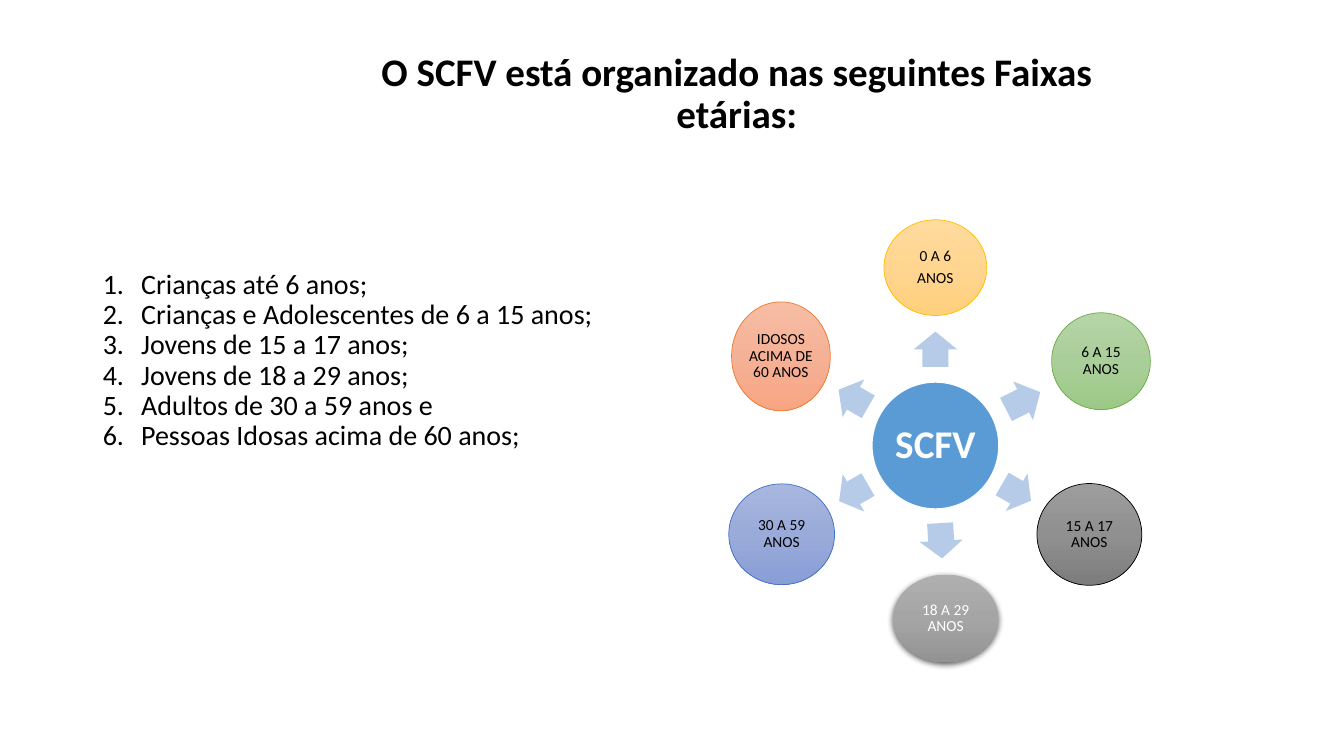
from copy import deepcopy
from dataclasses import dataclass
from math import cos, radians, sin

from lxml import etree
from pptx import Presentation
from pptx import util as u
from pptx.dml.color import RGBColor
from pptx.enum import shapes, text
from pptx.oxml import ns

COLUMNS, ROWS = 160, 90
HUB_COLUMN, HUB_ROW, HUB_SIZE = 111.36, 53.04, 15.12
ARROW_HEIGHT = 5.16
FONT = "Calibri"
AGE_GROUPS = [
    "Crianças até 6 anos;",
    "Crianças e Adolescentes de 6 a 15 anos;",
    "Jovens de 15 a 17 anos;",
    "Jovens de 18 a 29 anos;",
    "Adultos de 30 a 59 anos e",
    "Pessoas Idosas acima de 60 anos;",
]


@dataclass
class Spoke:
    lines: list[str]
    angle: float
    arrow_reach: float
    arrow_length: float
    reach: float
    width: float
    height: float
    shades: tuple[str, str, str]
    outline: str | None
    ink: str = "000000"


SPOKES = [
    Spoke(["0 A 6", "ANOS"], 270, 11.46, 4.2, 21.18, 12.24, 11.4,
          ("FFDB9E", "FFD590", "FFD07C"), "FFC000"),
    Spoke(["6 A 15 ANOS"], 333, 11.72, 4.56, 22.12, 11.76, 11.52,
          ("B5D5A7", "AACE9A", "9CC987"), "70AD47"),
    Spoke(["15 A 17 ANOS"], 30, 11.16, 3.96, 21.16, 12.48, 12.12,
          ("9D9D9D", "909090", "7C7C7C"), "000000"),
    Spoke(["18 A 29 ANOS"], 86.6, 11.36, 4.2, 20.62, 12.48, 10.44,
          ("AFAFAF", "A5A5A5", "939393"), None, "FFFFFF"),
    Spoke(["30 A 59 ANOS"], 150, 11.26, 3.96, 21.13, 12.6, 12,
          ("A8B7DF", "9AABD9", "889ED7"), "4472C4"),
    Spoke(["IDOSOS ACIMA DE 60 ANOS"], 210, 11.27, 4.08, 21.24, 11.76, 12.96,
          ("F7BDA5", "F5B196", "F8A582"), "ED7D31"),
]

deck = Presentation()
deck.slide_width, deck.slide_height = u.Inches(13.33), u.Inches(7.5)
page = deck.slides.add_slide(deck.slide_layouts[1])


def color(value: str) -> RGBColor:
    return RGBColor.from_string(value)


def across(columns: float) -> int:
    return round(deck.slide_width * columns / COLUMNS)


def down(rows: float) -> int:
    return round(deck.slide_height * rows / ROWS)


def place(box, column: float, row: float, width: float, height: float) -> None:
    box.left, box.top = across(column), down(row)
    box.width, box.height = across(width), down(height)


def style(para, size: float, ink: str, bold: bool, align) -> None:
    para.alignment = align
    para.line_spacing = 0.9
    para.space_before = u.Pt(0)
    para.font.name, para.font.size, para.font.bold = FONT, u.Pt(size), bold
    para.font.color.rgb = color(ink)


def add_at_angle(kind, angle: float, reach: float, width: float, height: float):
    column = HUB_COLUMN + reach * cos(radians(angle)) - width / 2
    row = HUB_ROW + reach * sin(radians(angle)) - height / 2
    shape = page.shapes.add_shape(
        kind, across(column), down(row), across(width), down(height))
    shape.shadow.inherit = False
    return shape


def write(shape, lines: list[str], size: float, ink: str, bold: bool, inset: float) -> None:
    frame = shape.text_frame
    frame.word_wrap = True
    frame.vertical_anchor = text.MSO_ANCHOR.MIDDLE
    frame.margin_left = frame.margin_right = u.Inches(inset)
    frame.margin_top = frame.margin_bottom = u.Inches(inset)
    frame.text = "\n".join(lines)
    for para in frame.paragraphs:
        style(para, size, ink, bold, text.PP_ALIGN.CENTER)
        para.space_after = u.Pt(size * 0.35)


def shade(shape, shades: tuple[str, str, str]) -> None:
    shape.fill.gradient()
    shape.fill.gradient_angle = 270
    stop_list = shape._element.spPr.find(".//" + ns.qn("a:gsLst"))
    stop_list.append(deepcopy(stop_list[0]))
    for stop, position, value in zip(shape.fill.gradient_stops, (0, 0.5, 1), shades):
        stop.position = position
        stop.color.rgb = color(value)


def cast_shadow(shape) -> None:
    effects = shape._element.spPr.find(ns.qn("a:effectLst"))
    shadow = etree.SubElement(
        effects, ns.qn("a:outerShdw"), blurRad=str(u.Pt(4.5)),
        dist=str(u.Pt(1.5)), dir="5400000", algn="ctr", rotWithShape="0")
    black = etree.SubElement(shadow, ns.qn("a:srgbClr"), val="000000")
    etree.SubElement(black, ns.qn("a:alpha"), val="63000")


def draw_title(words: str) -> None:
    title = page.shapes.title
    place(title, 36.72, 6.6, 102, 17.4)
    frame = title.text_frame
    frame.text = words
    frame.word_wrap = True
    frame.auto_size = text.MSO_AUTO_SIZE.NONE
    frame.vertical_anchor = text.MSO_ANCHOR.MIDDLE
    frame.margin_bottom = down(8.64)
    style(frame.paragraphs[0], 27.9, "000000", True, text.PP_ALIGN.CENTER)


def draw_list(items: list[str]) -> None:
    body = page.placeholders[1]
    place(body, 11.04, 31.56, 138, 44.4)
    frame = body.text_frame
    frame.text = "\n".join(items)
    frame.auto_size = text.MSO_AUTO_SIZE.NONE
    indent = across(4.56)
    for para in frame.paragraphs:
        settings = para._p.get_or_add_pPr()
        settings.set("marL", str(indent))
        settings.set("indent", str(-indent))
        etree.SubElement(settings, ns.qn("a:buFont"), typeface="+mj-lt")
        etree.SubElement(settings, ns.qn("a:buAutoNum"), type="arabicPeriod")
        style(para, 20, "000000", False, text.PP_ALIGN.JUSTIFY)


def draw_hub(label: str) -> None:
    hub = add_at_angle(shapes.MSO_SHAPE.OVAL, 0, 0, HUB_SIZE, HUB_SIZE)
    hub.fill.solid()
    hub.fill.fore_color.rgb = color("5B9BD5")
    hub.line.color.rgb = color("FFFFFF")
    hub.line.width = u.Pt(1)
    write(hub, [label], 28, "FFFFFF", True, 0.04)


def draw_spoke(spoke: Spoke) -> None:
    arrow = add_at_angle(shapes.MSO_SHAPE.RIGHT_ARROW, spoke.angle,
                         spoke.arrow_reach, spoke.arrow_length, ARROW_HEIGHT)
    arrow.rotation = spoke.angle
    arrow.adjustments[0], arrow.adjustments[1] = 0.6, 0.5
    arrow.fill.solid()
    arrow.fill.fore_color.rgb = color("B5CBE7")
    arrow.line.fill.background()

    bubble = add_at_angle(shapes.MSO_SHAPE.OVAL, spoke.angle,
                          spoke.reach, spoke.width, spoke.height)
    shade(bubble, spoke.shades)
    if spoke.outline:
        bubble.line.color.rgb = color(spoke.outline)
        bubble.line.width = u.Pt(0.5)
    else:
        bubble.line.fill.background()
        cast_shadow(bubble)
    write(bubble, spoke.lines, 11, spoke.ink, False, 0.02)


draw_title("O SCFV está organizado nas seguintes Faixas etárias:")
draw_list(AGE_GROUPS)
draw_hub("SCFV")
for age_spoke in SPOKES:
    draw_spoke(age_spoke)
deck.save("out.pptx")
